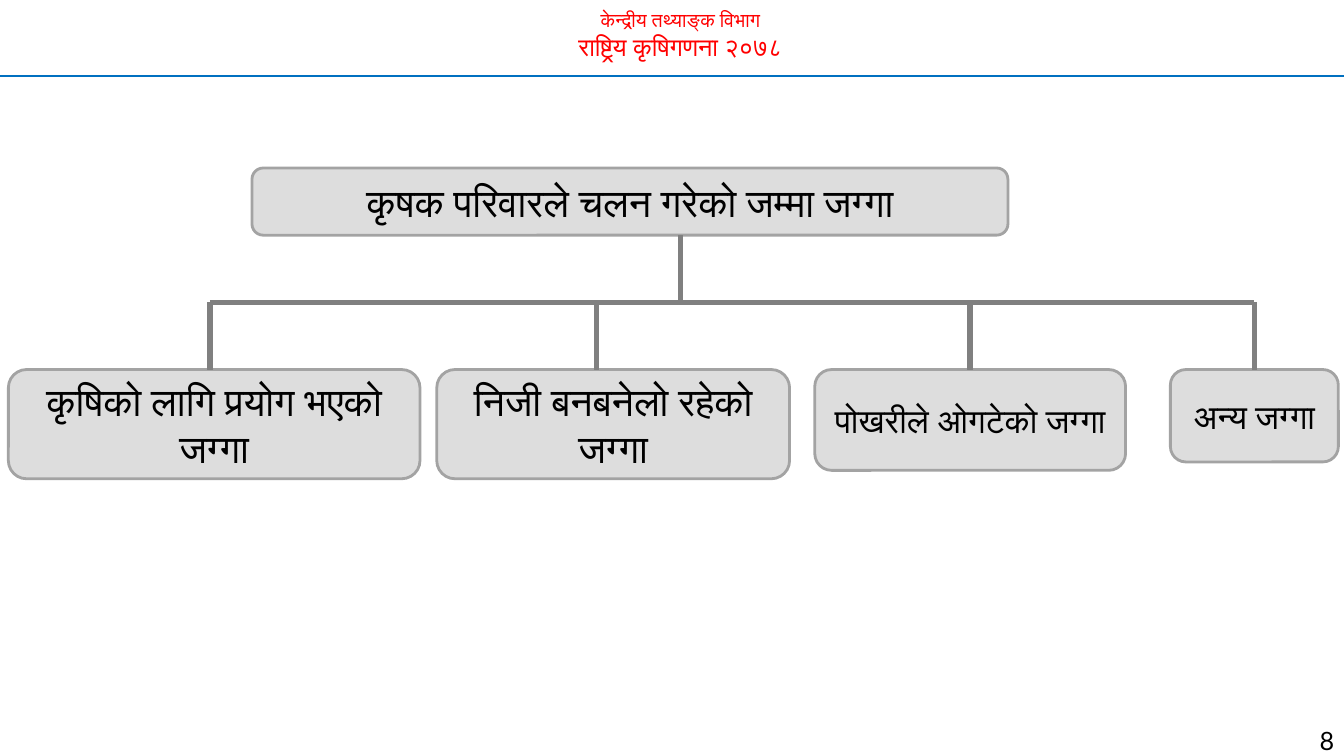
from lxml.etree import SubElement
from pptx import Presentation
from pptx.dml.color import RGBColor as Color
from pptx.enum.shapes import MSO_CONNECTOR as Connector, MSO_SHAPE as Shape
from pptx.enum.text import MSO_ANCHOR as Anchor, MSO_AUTO_SIZE as AutoSize, PP_ALIGN as Align
from pptx.oxml.ns import qn
from pptx.util import Pt

COLORS = {
    "header": "FF0000",
    "rule": "0070C0",
    "box": "DDDDDD",
    "border": "A3A3A3",
    "branch": "808080",
    "text": "000000",
}


class ChartSlide:
    """Holds the style and the current slide."""

    def __init__(self, page, colors):
        self.page = page
        self.colors = colors

    def color(self, name):
        return Color.from_string(self.colors[name])

    def add_text(self, para, text, font, size, color, align=Align.CENTER):
        para.alignment = align
        span = para.add_run()
        span.text = text
        for key, value in {"name": font, "size": Pt(size), "bold": False}.items():
            setattr(span.font, key, value)
        span.font.color.rgb = self.color(color)

    def header(self, lines, left, top, width, height):
        title = self.page.shapes.title
        place = {"left": left, "top": top, "width": width, "height": height}
        for key, value in place.items():
            setattr(title, key, Pt(value))
        frame = title.text_frame
        for key, value in {"auto_size": AutoSize.NONE, "word_wrap": True,
                           "vertical_anchor": Anchor.TOP}.items():
            setattr(frame, key, value)
        for index, (text, size) in enumerate(lines):
            para = frame.add_paragraph() if index else frame.paragraphs[0]
            para.space_before = Pt(0)
            self.add_text(para, text, "Calibri", size, "header")

    def line(self, x1, y1, x2, y2, color="branch", weight=4):
        line = self.page.shapes.add_connector(
            Connector.STRAIGHT, Pt(x1), Pt(y1), Pt(x2), Pt(y2))
        line.line.color.rgb = self.color(color)
        line.line.width = Pt(weight)
        SubElement(line._element.spPr, qn("a:effectLst"))

    def box(self, text, left, top, width, height, size):
        box = self.page.shapes.add_shape(
            Shape.ROUNDED_RECTANGLE, Pt(left), Pt(top), Pt(width), Pt(height))
        box.shadow.inherit = False
        box.fill.solid()
        box.fill.fore_color.rgb = self.color("box")
        box.line.color.rgb = self.color("border")
        box.line.width = Pt(2)
        frame = box.text_frame
        for key, value in {"word_wrap": True, "vertical_anchor": Anchor.MIDDLE}.items():
            setattr(frame, key, value)
        self.add_text(frame.paragraphs[0], text, "Roboto", size, "text")

    def page_number(self, text, left, top, width, height):
        box = self.page.shapes.add_textbox(Pt(left), Pt(top), Pt(width), Pt(height))
        box.text_frame.word_wrap = True
        para = box.text_frame.paragraphs[0]
        para.line_spacing = 1.5
        self.add_text(para, text, "Lato", 18, "text", Align.RIGHT)


def main():
    deck = Presentation()
    deck.slide_width, deck.slide_height = Pt(960), Pt(540)
    slide = ChartSlide(deck.slides.add_slide(deck.slide_layouts[5]), COLORS)

    # Header and rule
    slide.header([("केन्द्रीय तथ्याङ्क विभाग", 14), ("राष्ट्रिय कृषिगणना २०७८", 18)],
                 86, 2, 800, 46)
    slide.line(0, 54, 960, 54, "rule", 1.5)

    # Total land and its kinds: text, left, width, height, size, branch x
    root_bottom, branch_y, kinds_top = 168, 216, 264
    kinds = [
        ("कृषिको लागि प्रयोग भएको जग्गा", 6, 294, 78, 28, 150),
        ("निजी बनबनेलो रहेको जग्गा", 312, 252, 78, 28, 426),
        ("पोखरीले ओगटेको जग्गा", 582, 222, 72, 24, 693),
        ("अन्य जग्गा", 836, 120, 66, 24, 896),
    ]
    slide.box("कृषक परिवारले चलन गरेको जम्मा जग्गा", 180, 120, 540, 48, 28)
    for text, left, width, height, size, branch_x in kinds:
        slide.box(text, left, kinds_top, width, height, size)
        slide.line(branch_x, branch_y, branch_x, kinds_top)

    # Trunk and crossbar
    slide.line(486, root_bottom, 486, branch_y)
    slide.line(kinds[0][-1], branch_y, kinds[-1][-1], branch_y)

    # Page number
    slide.page_number("8", 886, 504, 74, 30)

    deck.save("out.pptx")


if __name__ == "__main__":
    main()
